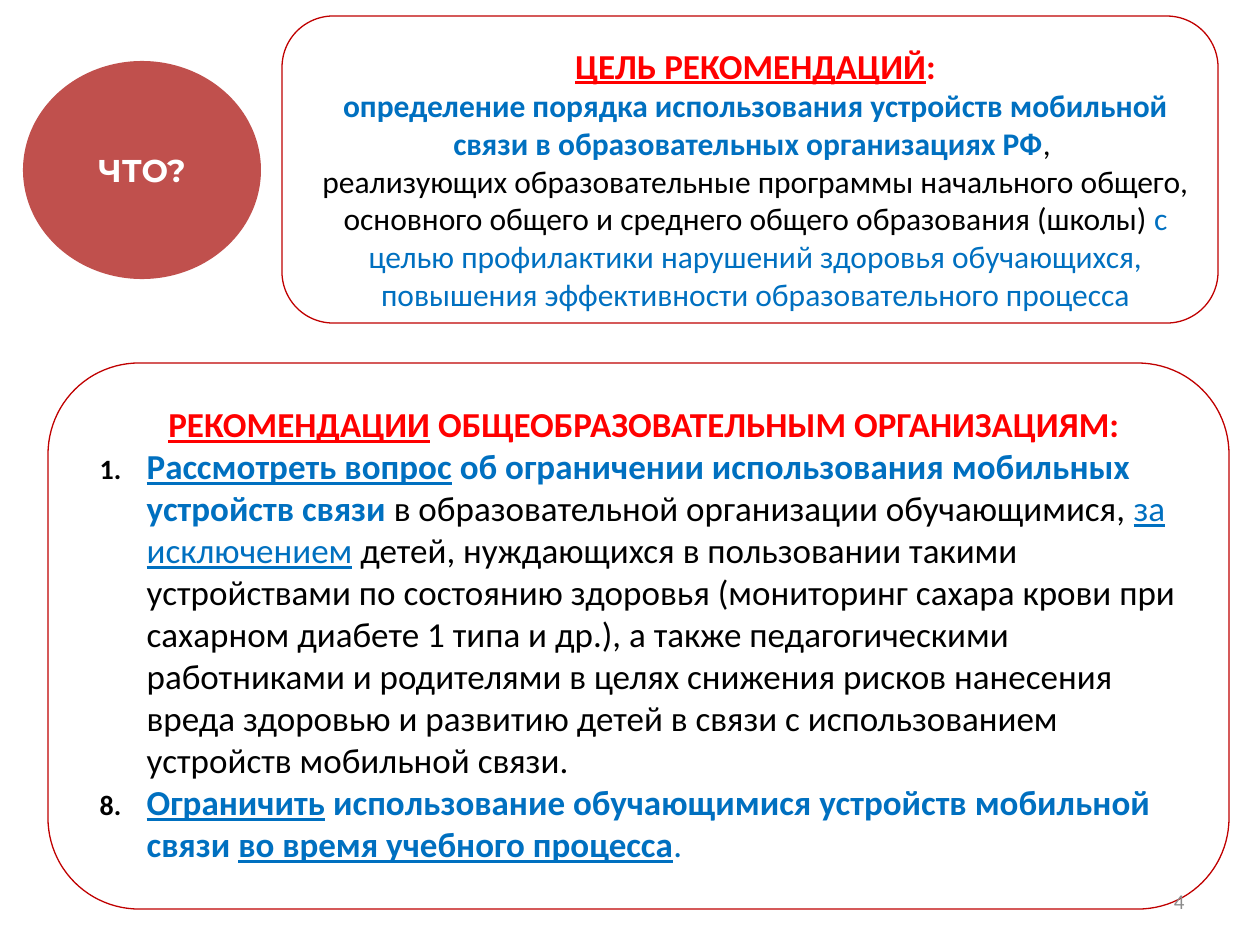
"""Build the slide on the purpose of the mobile phone recommendations for schools."""
from lxml.etree import SubElement
from pptx import Presentation
from pptx.dml.color import RGBColor
from pptx.enum.shapes import MSO_SHAPE as Preset
from pptx.enum.text import MSO_ANCHOR as Anchor, PP_ALIGN as Align
from pptx.oxml.ns import qn
from pptx.util import Emu, Pt

PX = 914400 / 126
COLORS = {
    "white": "FFFFFF", "black": "000000", "red": "FF0000", "blue": "0070C0",
    "border": "C00000", "circle": "C0504D", "gray": "8B8B8B",
}


def px(*lengths):
    return [Emu(round(length * PX)) for length in lengths]


def add_run(paragraph, text, size, color, style="", font="Calibri"):
    run = paragraph.add_run()
    run.text = text
    run.font.name = font
    run.font.size = Pt(size)
    run.font.bold = "b" in style
    run.font.underline = "u" in style
    run.font.color.rgb = RGBColor.from_string(COLORS[color])


deck = Presentation()
deck.slide_width, deck.slide_height = px(1260, 945)
slide = deck.slides.add_slide(deck.slide_layouts[6])

goal = [
    (None, 20, [("ЦЕЛЬ РЕКОМЕНДАЦИЙ", "red", "bu"), (":", "red", "b")]),
    (None, 18, [
        ("определение порядка использования устройств мобильной связи "
         "в образовательных организациях РФ", "blue", "b"),
        (", ", "black", ""),
    ]),
    (None, 18, [
        ("реализующих образовательные программы начального общего, основного общего "
         "и среднего общего образования (школы) ", "black", ""),
        ("с целью профилактики нарушений здоровья обучающихся, повышения "
         "эффективности образовательного процесса", "blue", ""),
    ]),
]
recommendations = [
    (None, 20, [
        ("РЕКОМЕНДАЦИИ", "red", "bu"),
        (" ОБЩЕОБРАЗОВАТЕЛЬНЫМ ОРГАНИЗАЦИЯМ:", "red", "b"),
    ]),
    (1, 20, [
        ("Рассмотреть вопрос", "blue", "bu"),
        (" об ограничении использования мобильных устройств связи ", "blue", "b"),
        ("в образовательной организации обучающимися, ", "black", ""),
        ("за исключением", "blue", "u"),
        (" детей, нуждающихся в пользовании такими устройствами по состоянию здоровья "
         "(мониторинг сахара крови при сахарном диабете 1 типа и др.), а также "
         "педагогическими работниками и родителями в целях снижения рисков нанесения "
         "вреда здоровью и развитию детей в связи с использованием устройств "
         "мобильной связи.", "black", ""),
    ]),
    (8, 20, [
        ("Ограничить", "blue", "bu"),
        (" использование обучающимися устройств мобильной связи ", "blue", "b"),
        ("во время учебного процесса", "blue", "bu"),
        (".", "blue", ""),
    ]),
]

for bounds, paragraphs in [((282, 16, 936, 307), goal),
                           ((48, 363, 1181, 546), recommendations)]:
    panel = slide.shapes.add_shape(Preset.ROUNDED_RECTANGLE, *px(*bounds))
    panel.shadow.inherit = False
    panel.fill.solid()
    panel.fill.fore_color.rgb = RGBColor.from_string(COLORS["white"])
    panel.line.color.rgb = RGBColor.from_string(COLORS["border"])
    panel.line.width = Pt(0.75)
    frame = panel.text_frame
    frame.word_wrap = True
    frame.vertical_anchor = Anchor.TOP
    (frame.margin_left, frame.margin_top,
     frame.margin_right, frame.margin_bottom) = px(8, 13, 13, 6)
    for index, (number, size, runs) in enumerate(paragraphs):
        paragraph = frame.add_paragraph() if index else frame.paragraphs[0]
        paragraph.alignment = Align.LEFT if number else Align.CENTER
        margin, indent = px(64, -47) if number else px(16, 0)
        properties = paragraph._p.get_or_add_pPr()
        properties.set("marL", str(margin))
        properties.set("indent", str(indent))
        if number:
            number_color = SubElement(properties, qn("a:buClr"))
            SubElement(number_color, qn("a:srgbClr"), val=COLORS["black"])
            SubElement(properties, qn("a:buSzPct"), val="80000")
            SubElement(properties, qn("a:buFont"), typeface="+mj-lt")
            SubElement(properties, qn("a:buAutoNum"),
                       type="arabicPeriod", startAt=str(number))
        for text, color, style in runs:
            add_run(paragraph, text, size, color, style)

page_number = slide.shapes.add_textbox(*px(903, 876, 294, 50)).text_frame
page_number.word_wrap = True
page_number.vertical_anchor = Anchor.MIDDLE
page_number.paragraphs[0].alignment = Align.RIGHT
add_run(page_number.paragraphs[0], "4", 12, "gray")

question = slide.shapes.add_shape(Preset.OVAL, *px(23, 61, 238, 218))
question.shadow.inherit = False
question.fill.solid()
question.fill.fore_color.rgb = RGBColor.from_string(COLORS["circle"])
question.line.fill.background()
question.text_frame.word_wrap = True
question.text_frame.vertical_anchor = Anchor.MIDDLE
question.text_frame.paragraphs[0].alignment = Align.CENTER
add_run(question.text_frame.paragraphs[0], "ЧТО?", 18, "white", "b", "Montserrat")

deck.save("out.pptx")
